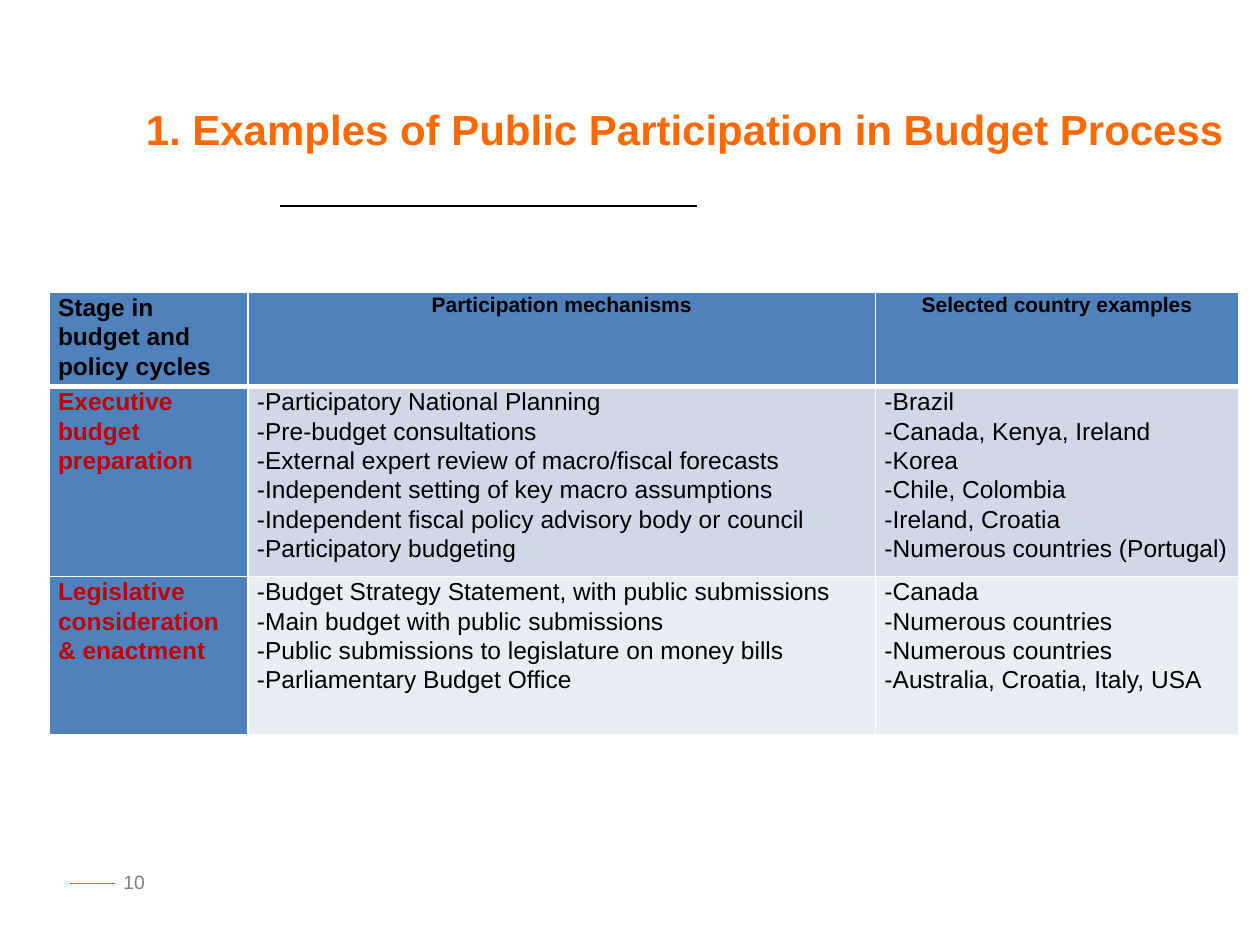
from lxml.etree import SubElement
from pptx import Presentation
from pptx.dml.color import RGBColor
from pptx.enum.shapes import MSO_CONNECTOR, MSO_SHAPE
from pptx.enum.text import MSO_ANCHOR, MSO_AUTO_SIZE, PP_ALIGN
from pptx.oxml.ns import qn
from pptx.util import Cm, Pt

FONT = "Arial"
BLACK = RGBColor(0x00, 0x00, 0x00)
WHITE = RGBColor(0xFF, 0xFF, 0xFF)
ORANGE = RGBColor(0xFF, 0x69, 0x00)
RED_ORANGE = RGBColor(0xFB, 0x53, 0x08)
GRAY = RGBColor(0x7F, 0x7F, 0x7F)
RED = RGBColor(0xC0, 0x00, 0x00)
BLUE = RGBColor(0x4F, 0x81, 0xBD)
BAND_FILLS = [RGBColor(0xD0, 0xD8, 0xE8), RGBColor(0xE9, 0xED, 0xF4)]

COL_WIDTHS = [4.01, 12.65, 7.32]
ROW_HEIGHTS = [1.9, 3.83, 3.18]
HEADERS = ["Stage in budget and policy cycles", "Participation mechanisms",
           "Selected country examples"]
STAGES = [
    ("Executive budget preparation",
     ["-Participatory National Planning",
      "-Pre-budget consultations",
      "-External expert review of macro/fiscal forecasts",
      "-Independent setting of key macro assumptions",
      "-Independent fiscal policy advisory body or council",
      "-Participatory budgeting"],
     ["-Brazil",
      "-Canada, Kenya, Ireland",
      "-Korea",
      "-Chile, Colombia",
      "-Ireland, Croatia",
      "-Numerous countries (Portugal)"]),
    ("Legislative consideration & enactment",
     ["-Budget Strategy Statement, with public submissions",
      "-Main budget with public submissions",
      "-Public submissions to legislature on money bills",
      "-Parliamentary Budget Office"],
     ["-Canada",
      "-Numerous countries",
      "-Numerous countries",
      "-Australia, Croatia, Italy, USA"]),
]


def format_text(tf, size, color, bold=False, align=PP_ALIGN.LEFT, spacing=None):
    for p in tf.paragraphs:
        p.alignment = align
        p.line_spacing = spacing
        for r in p.runs:
            r.font.name = FONT
            r.font.size = Pt(size)
            r.font.bold = bold
            r.font.color.rgb = color


def add_text(s, x, y, w, h, text, size, color, wrap=True, **style):
    tf = s.shapes.add_textbox(Cm(x), Cm(y), Cm(w), Cm(h)).text_frame
    tf.word_wrap = wrap
    tf.text = text
    format_text(tf, size, color, **style)
    return tf


def add_line(s, x1, x2, y, color):
    line = s.shapes.add_connector(MSO_CONNECTOR.STRAIGHT, Cm(x1), Cm(y), Cm(x2), Cm(y))
    line.line.color.rgb = color
    line.line.width = Pt(0.75)
    SubElement(line.element.spPr, qn("a:effectLst"))


def add_rule(s, x, y, w, h, color):
    sp = s.shapes.add_shape(MSO_SHAPE.RECTANGLE, Cm(x), Cm(y), Cm(w), Cm(h))
    sp.shadow.inherit = False
    sp.fill.solid()
    sp.fill.fore_color.rgb = color
    sp.line.color.rgb = color
    sp.line.width = Pt(0.75)


def set_borders(cell, bottom, top):
    tcPr = cell._tc.get_or_add_tcPr()
    for side, width in (("L", 1), ("R", 1), ("T", top), ("B", bottom)):
        ln = SubElement(tcPr, qn(f"a:ln{side}"), w=str(Pt(width)))
        fill = SubElement(ln, qn("a:solidFill"))
        SubElement(fill, qn("a:srgbClr"), val=str(WHITE))


def fill_cell(cell, text, fill, size, color, bottom=1, top=1, **style):
    cell.margin_left = cell.margin_right = Cm(0.18)
    cell.margin_top = cell.margin_bottom = 0
    cell.vertical_anchor = MSO_ANCHOR.TOP
    set_borders(cell, bottom, top)
    cell.fill.solid()
    cell.fill.fore_color.rgb = fill
    cell.text_frame.text = text
    format_text(cell.text_frame, size, color, spacing=1.07, **style)


def add_stage_table(s, x, y):
    table = s.shapes.add_table(len(ROW_HEIGHTS), len(COL_WIDTHS), Cm(x), Cm(y),
                               Cm(sum(COL_WIDTHS)), Cm(sum(ROW_HEIGHTS))).table
    for col, width in zip(table.columns, COL_WIDTHS):
        col.width = Cm(width)
    for row, height in zip(table.rows, ROW_HEIGHTS):
        row.height = Cm(height)

    # Header row
    for i, header in enumerate(HEADERS):
        fill_cell(table.cell(0, i), header, BLUE, 12 if i else 14, BLACK, bottom=3,
                  bold=True, align=PP_ALIGN.CENTER if i else PP_ALIGN.LEFT)

    # One row per stage
    for i, (stage, *lists) in enumerate(STAGES):
        top = 1 if i else 3
        fill_cell(table.cell(i + 1, 0), stage, BLUE, 14, RED, top=top, bold=True)
        for j, items in enumerate(lists, 1):
            fill_cell(table.cell(i + 1, j), "\n".join(items), BAND_FILLS[i], 14, BLACK,
                      top=top)


def main():
    prs = Presentation()
    prs.slide_width, prs.slide_height = Cm(25.4), Cm(19.05)
    s = prs.slides.add_slide(prs.slide_layouts[6])

    # Page number and its dash
    add_text(s, 1.27, 17.42, 1.9, 1.02, "10", 11, GRAY, align=PP_ALIGN.RIGHT)
    add_line(s, 2.31, 1.42, 17.81, RED_ORANGE)

    # Title, table and rule under the title
    title = add_text(s, 2.69, 1.96, 22.91, 1.27,
                     "1. Examples of Public Participation in Budget Process",
                     24, ORANGE, wrap=False, bold=True)
    title.auto_size = MSO_AUTO_SIZE.SHAPE_TO_FIT_TEXT
    add_stage_table(s, 0.99, 5.89)
    add_rule(s, 5.66, 4.14, 8.38, 0.03, BLACK)

    prs.save("out.pptx")


if __name__ == "__main__":
    main()
